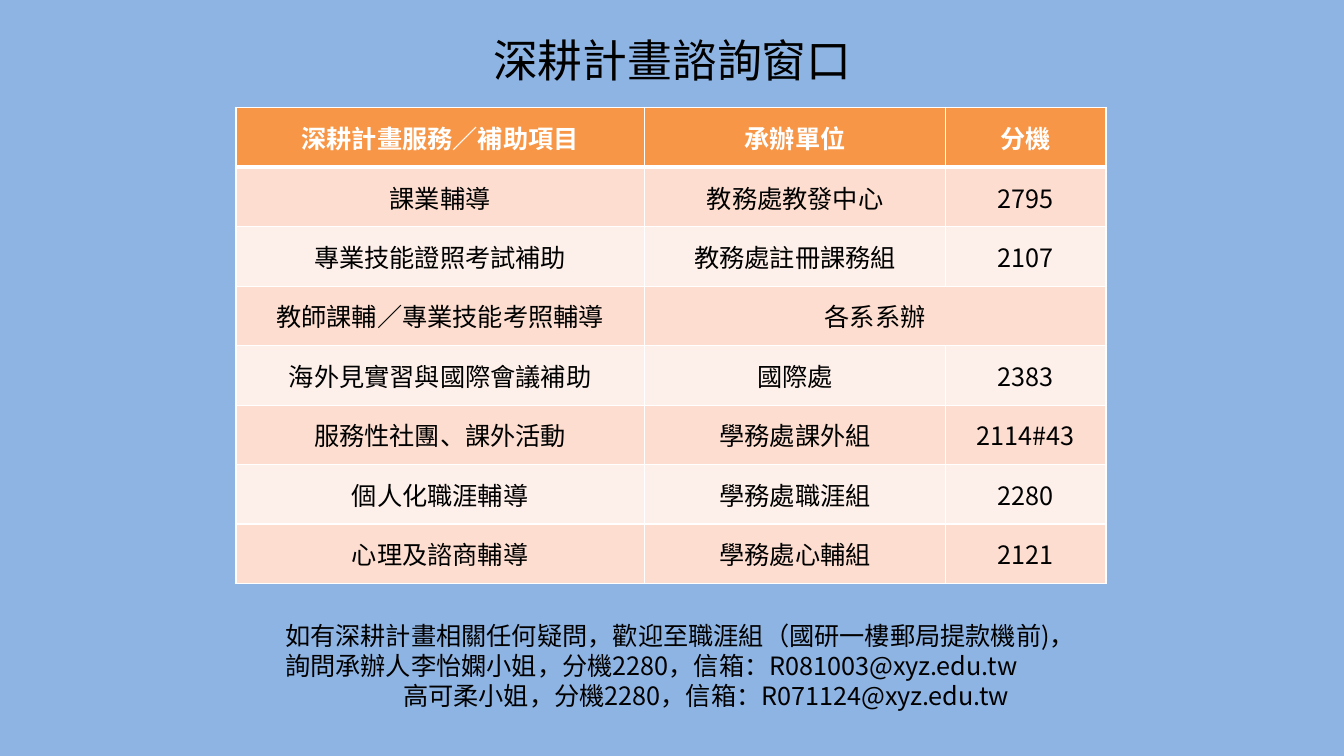
from lxml.etree import SubElement
from pptx import Presentation
from pptx.dml.color import RGBColor
from pptx.enum.text import MSO_ANCHOR, PP_ALIGN
from pptx.oxml.ns import qn
from pptx.util import Inches, Pt

FONT = "Noto Sans CJK SC"
BLUE = RGBColor(0x8E, 0xB4, 0xE3)
ORANGE = RGBColor(0xF7, 0x96, 0x46)
PEACH = RGBColor(0xFC, 0xDD, 0xCF)
CREAM = RGBColor(0xFD, 0xEF, 0xE9)
WHITE = RGBColor(0xFF, 0xFF, 0xFF)
BLACK = RGBColor(0, 0, 0)

WIDTHS = [4.05, 2.99, 1.59]
ROWS = [
    ["深耕計畫服務／補助項目", "承辦單位", "分機"],
    ["課業輔導", "教務處教發中心", "2795"],
    ["專業技能證照考試補助", "教務處註冊課務組", "2107"],
    ["教師課輔／專業技能考照輔導", "各系系辦"],
    ["海外見實習與國際會議補助", "國際處", "2383"],
    ["服務性社團、課外活動", "學務處課外組", "2114#43"],
    ["個人化職涯輔導", "學務處職涯組", "2280"],
    ["心理及諮商輔導", "學務處心輔組", "2121"],
]
NOTES = [
    ("如有深耕計畫相關任何疑問，歡迎至職涯組（國研一樓郵局提款機前)，", 0),
    ("詢問承辦人李怡嫻小姐，分機2280，信箱：R081003@xyz.edu.tw", 0),
    ("高可柔小姐，分機2280，信箱：R071124@xyz.edu.tw", 1.17),
]


def style(par, size, color=BLACK, bold=False):
    for run in par.runs:
        font = run.font
        font.size, font.bold, font.name = Pt(size), bold, FONT
        font.color.rgb = color
        SubElement(font._element, qn("a:ea"), typeface=FONT)


def border(cell, row):
    props = cell._tc.get_or_add_tcPr()
    for side in "LRTB":
        thick = (row, side) in [(0, "B"), (1, "T")]
        line = SubElement(props, qn(f"a:ln{side}"), w=str(Pt(3 if thick else 1)))
        fill = SubElement(line, qn("a:solidFill"))
        SubElement(fill, qn("a:srgbClr"), val=str(WHITE))


def add_title(slide, left, top, width, height):
    title = slide.shapes.title
    title.left, title.top = Inches(left), Inches(top)
    title.width, title.height = Inches(width), Inches(height)
    frame = title.text_frame
    frame.text = "深耕計畫諮詢窗口"
    frame.vertical_anchor = MSO_ANCHOR.MIDDLE
    par = frame.paragraphs[0]
    par.alignment = PP_ALIGN.CENTER
    style(par, 32)


def add_grid(slide, left, top, width, height):
    table = slide.shapes.add_table(
        len(ROWS), len(WIDTHS), Inches(left), Inches(top), Inches(width), Inches(height)
    ).table
    for col, size in zip(table.columns, WIDTHS):
        col.width = Inches(size)
    for r, texts in enumerate(ROWS):
        for c in range(len(WIDTHS)):
            cell = table.cell(r, c)
            border(cell, r)
            cell.fill.solid()
            cell.fill.fore_color.rgb = ORANGE if r == 0 else PEACH if r % 2 else CREAM
            cell.vertical_anchor = MSO_ANCHOR.MIDDLE
            if c < len(texts):
                par = cell.text_frame.paragraphs[0]
                par.text = texts[c]
                par.alignment = PP_ALIGN.CENTER
                style(par, 18, BLACK if r else WHITE, r == 0)
        if len(texts) < len(WIDTHS):
            table.cell(r, len(texts) - 1).merge(table.cell(r, len(WIDTHS) - 1))


def add_notes(slide, left, top, width, height):
    box = slide.shapes.add_textbox(Inches(left), Inches(top), Inches(width), Inches(height))
    frame = box.text_frame
    frame.word_wrap = True
    for i, (text, indent) in enumerate(NOTES):
        par = frame.add_paragraph() if i else frame.paragraphs[0]
        par.text = text
        par.space_before = Pt(3)
        par.line_spacing = 0.85
        par._p.get_or_add_pPr().set("marL", str(Inches(indent)))
        style(par, 18)


def main():
    deck = Presentation()
    deck.slide_width, deck.slide_height = Inches(13.33), Inches(7.5)
    slide = deck.slides.add_slide(deck.slide_layouts[5])
    slide.background.fill.solid()
    slide.background.fill.fore_color.rgb = BLUE
    add_title(slide, 2.17, 0.21, 9, 0.77)
    add_notes(slide, 2.73, 6.15, 8.44, 1.18)
    add_grid(slide, 2.34, 1.07, sum(WIDTHS), 4.72)
    deck.save("out.pptx")


if __name__ == "__main__":
    main()
